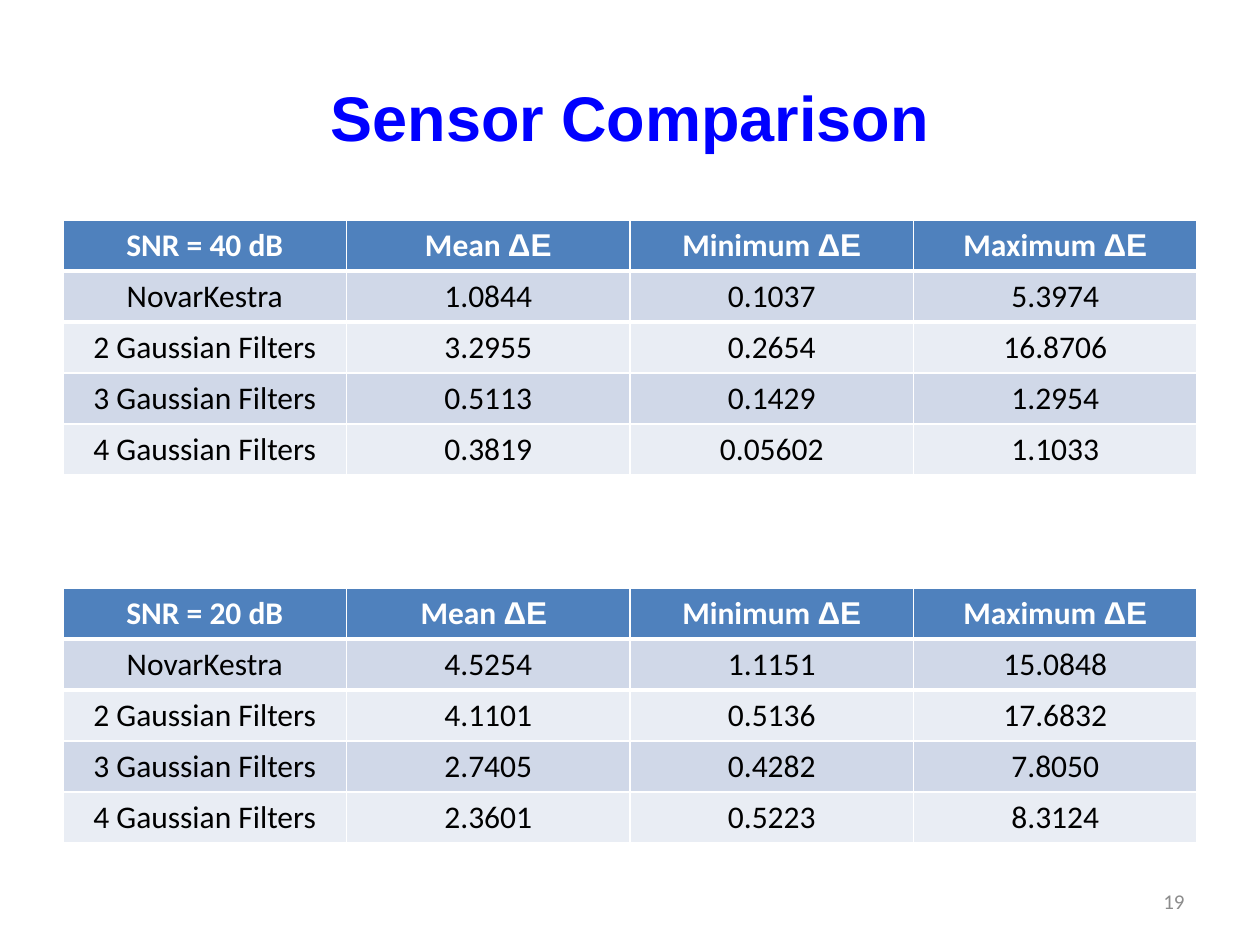
from dataclasses import dataclass

from lxml import etree
from pptx import Presentation
from pptx.dml.color import RGBColor
from pptx.enum.text import MSO_ANCHOR, PP_ALIGN
from pptx.oxml.ns import qn
from pptx.util import Emu, Pt

CENTER, RIGHT = PP_ALIGN.CENTER, PP_ALIGN.RIGHT
MIDDLE = MSO_ANCHOR.MIDDLE
PX_PER_INCH = 126
BLANK_LAYOUT = 6


@dataclass(frozen=True)
class Theme:
    title_font: str = "Arial"
    body_font: str = "Calibri"
    title_size: int = 36
    table_size: int = 18
    number_size: int = 12
    header_rule: int = 3
    title_color: str = "0000FF"
    number_color: str = "8C8C8C"
    header_text: str = "FFFFFF"
    body_text: str = "000000"
    rule_color: str = "FFFFFF"
    header_fill: str = "4F81BD"
    band_fills: tuple = ("D0D8E8", "E9EDF4")


THEME = Theme()

MARGIN = 63
CONTENT_WIDTH = 1134
ROW_HEIGHT = 51

SENSORS = ["NovarKestra"] + [f"{count} Gaussian Filters" for count in (2, 3, 4)]

# Each header cell holds its label and the symbol set in the title font.
HEADERS_40_DB = [("SNR = 40 dB", ""), ("Mean ", "ΔE"), ("Minimum ", "ΔE"), ("Maximum ", "ΔE")]
HEADERS_20_DB = [("SNR = 20 dB", ""), ("Mean ", "ΔE "), ("Minimum ", "ΔE"), ("Maximum ", "ΔE")]

VALUES_40_DB = [
    ("1.0844", "0.1037", "5.3974"),
    ("3.2955", "0.2654", "16.8706"),
    ("0.5113", "0.1429", "1.2954"),
    ("0.3819", "0.05602", "1.1033"),
]
VALUES_20_DB = [
    ("4.5254", "1.1151", "15.0848"),
    ("4.1101", "0.5136", "17.6832"),
    ("2.7405", "0.4282", "7.8050"),
    ("2.3601", "0.5223", "8.3124"),
]


def px(length):
    return Emu(round(length * 914400 / PX_PER_INCH))


def format_run(run, font, size, color, bold=False):
    run.font.name = font
    run.font.size = Pt(size)
    run.font.color.rgb = RGBColor.from_string(color)
    run.font.bold = bold


def add_text(slide, text, box, align, font, size, color, bold=False):
    shape = slide.shapes.add_textbox(*map(px, box))
    frame = shape.text_frame
    frame.word_wrap = True
    frame.vertical_anchor = MIDDLE
    frame.text = text
    paragraph = frame.paragraphs[0]
    paragraph.alignment = align
    format_run(paragraph.runs[0], font, size, color, bold)


def fill_cell(cell, text, fill, color, bold=False, symbol=""):
    cell.fill.solid()
    cell.fill.fore_color.rgb = RGBColor.from_string(fill)
    paragraph = cell.text_frame.paragraphs[0]
    paragraph.text = text
    paragraph.alignment = CENTER
    format_run(paragraph.runs[0], THEME.body_font, THEME.table_size, color, bold)
    if symbol:
        run = paragraph.add_run()
        run.text = symbol
        format_run(run, THEME.title_font, THEME.table_size, color, bold)


def add_rule(cell, side, width):
    """Draw a cell border; side is the tag, such as a:lnB for the bottom."""
    properties = cell._tc.get_or_add_tcPr()
    line = etree.Element(qn(side), w=str(Pt(width)))
    solid_fill = etree.SubElement(line, qn("a:solidFill"))
    etree.SubElement(solid_fill, qn("a:srgbClr"), val=THEME.rule_color)
    properties.insert(0, line)


def add_comparison_table(slide, top, headers, values):
    """Add one table; its thin white rules come from the default table style."""
    row_count = len(values) + 1
    table = slide.shapes.add_table(
        row_count, len(headers),
        px(MARGIN), px(top), px(CONTENT_WIDTH), px(ROW_HEIGHT * row_count),
    ).table
    for column, (label, symbol) in enumerate(headers):
        header = table.cell(0, column)
        fill_cell(header, label, THEME.header_fill,
                  THEME.header_text, bold=True, symbol=symbol)
        add_rule(header, "a:lnB", THEME.header_rule)
        add_rule(table.cell(1, column), "a:lnT", THEME.header_rule)
    for index, (sensor, figures) in enumerate(zip(SENSORS, values)):
        fill = THEME.band_fills[index % 2]
        for column, text in enumerate((sensor, *figures)):
            fill_cell(table.cell(index + 1, column), text, fill, THEME.body_text)


def main():
    presentation = Presentation()
    presentation.slide_width = px(1260)
    presentation.slide_height = px(945)
    slide = presentation.slides.add_slide(presentation.slide_layouts[BLANK_LAYOUT])

    add_text(slide, "Sensor Comparison", (MARGIN, 37, CONTENT_WIDTH, 158), CENTER,
             THEME.title_font, THEME.title_size, THEME.title_color, bold=True)
    add_comparison_table(slide, 220, HEADERS_40_DB, VALUES_40_DB)
    add_text(slide, "19", (903, 876, 294, 50), RIGHT,
             THEME.body_font, THEME.number_size, THEME.number_color)
    add_comparison_table(slide, 588, HEADERS_20_DB, VALUES_20_DB)

    presentation.save("out.pptx")


if __name__ == "__main__":
    main()
